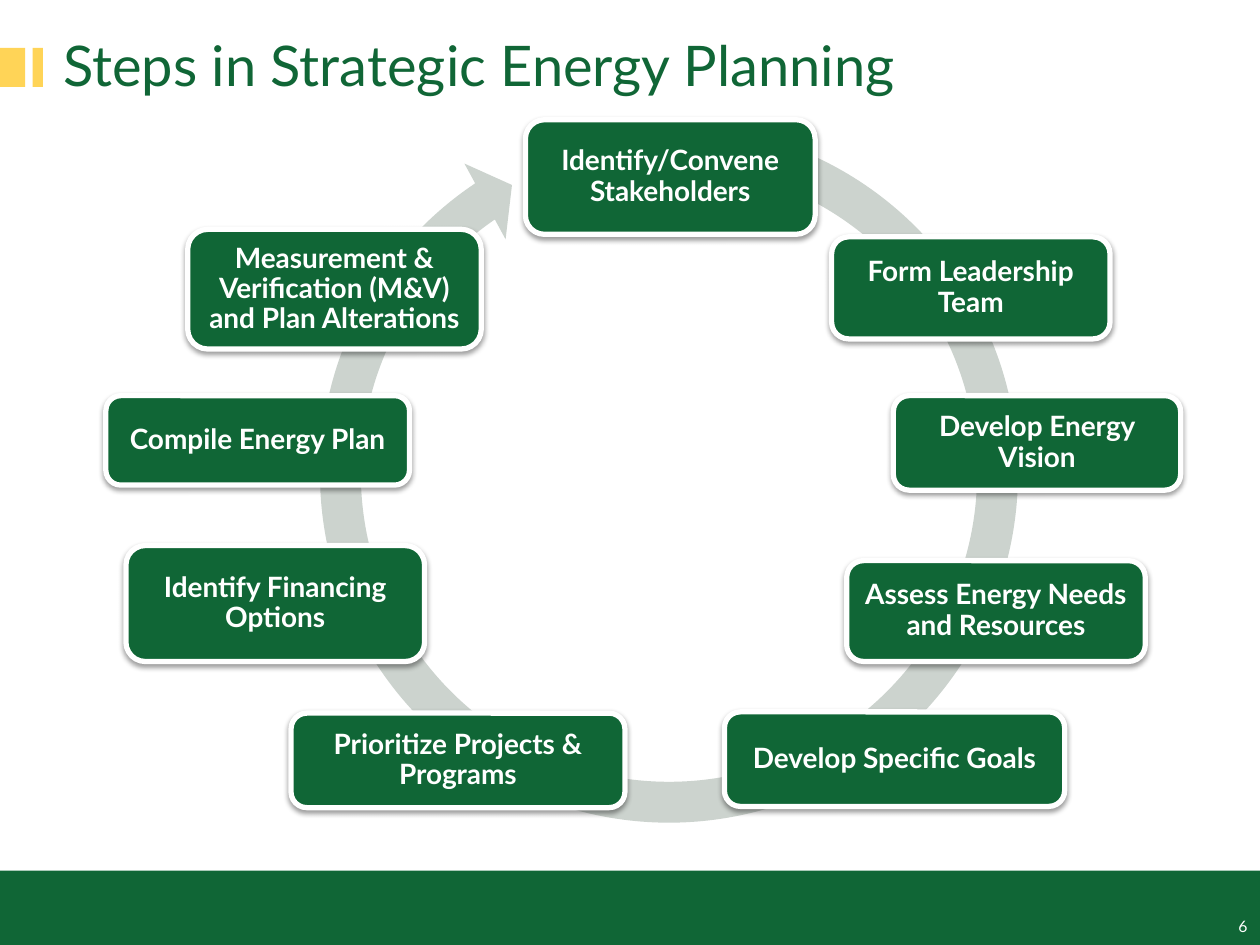
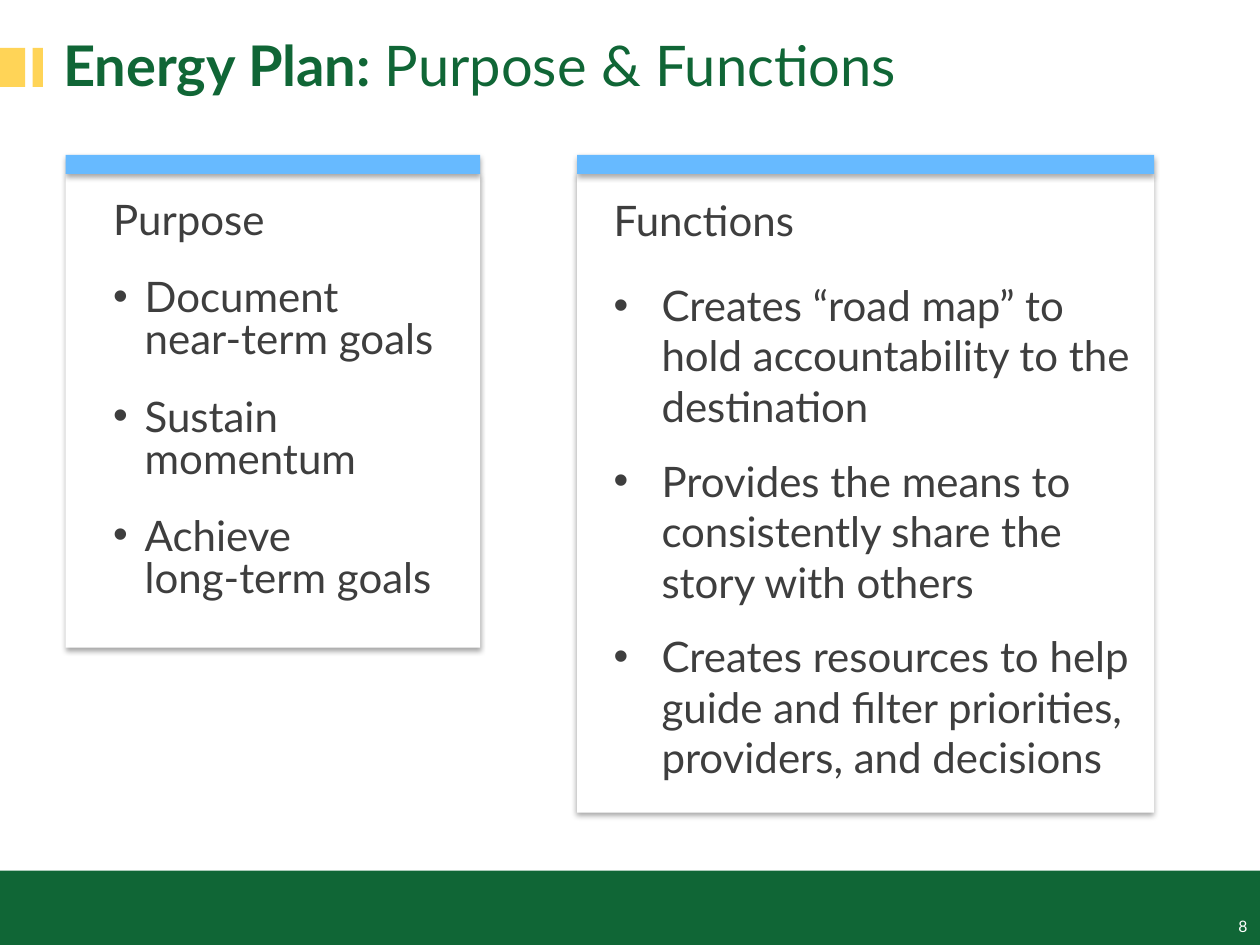
import pptx
import pptx.dml.color
import pptx.enum.shapes
import pptx.enum.text
import pptx.oxml
import pptx.oxml.ns
import pptx.util
from lxml import etree

Inches = pptx.util.Inches
Pt = pptx.util.Pt
Shape = pptx.enum.shapes.MSO_SHAPE
Align = pptx.enum.text.PP_ALIGN
Anchor = pptx.enum.text.MSO_ANCHOR
qn = pptx.oxml.ns.qn

FONT = "Lato"
COLORS = {
    "green": "106636",
    "yellow": "FFD457",
    "blue": "67BAFF",
    "ring": "CCD3CE",
    "text": "3E3E3E",
    "white": "FFFFFF",
}
BAND = (0, 6.91, 10, 0.6)
TITLE_MARKS = [(0, 0.38, 0.2, 0.31), (0.26, 0.38, 0.08, 0.31)]
TITLE = (0.4, 0.19, 9, 1.08)
PAGE_NUMBER = (7.67, 7.23, 2.33, 0.27)
BAR_HEIGHT = 0.15

RING = (2.36, 0.81, 5.9, 5.9)
RING_ADJUSTMENTS = [0.055, 3.307, 141.572, 171.58, 0.058]
STEPS = [
    ("Identify/Convene Stakeholders", (4.17, 0.95, 2.3, 0.91)),
    ("Form Leadership Team", (6.6, 1.88, 2.21, 0.81)),
    ("Develop Energy Vision", (7.09, 3.14, 2.28, 0.75)),
    ("Assess Energy Needs and Resources", (6.72, 4.45, 2.37, 0.8)),
    ("Develop Specific Goals", (5.75, 5.65, 2.7, 0.75)),
    ("Prioritize Projects & Programs", (2.31, 5.66, 2.65, 0.75)),
    ("Identify Financing Options", (1, 4.33, 2.37, 0.92)),
    ("Compile Energy Plan", (0.84, 3.14, 2.41, 0.71)),
    ("Measurement & Verification (M&V) and Plan Alterations", (1.49, 1.82, 2.33, 0.95)),
]
PURPOSE = ["Document\nnear-term goals", "Sustain momentum", "Achieve\nlong-term goals"]
FUNCTIONS = [
    "Creates “road map” to hold accountability to the destination",
    "Provides the means to consistently share the story with others",
    "Creates resources to help guide and filter priorities, providers, and decisions",
]


def color(name):
    """Return the named colour as an RGB value."""
    return pptx.dml.color.RGBColor.from_string(COLORS[name])


def place(shape, box):
    """Move and size a shape to a box given in inches."""
    shape.left, shape.top, shape.width, shape.height = map(Inches, box)


def add_filled_shape(slide, kind, box, fill):
    """Add a flat shape without outline or shadow."""
    shape = slide.shapes.add_shape(kind, *map(Inches, box))
    shape.shadow.inherit = False
    shape.fill.solid()
    shape.fill.fore_color.rgb = color(fill)
    shape.line.fill.background()
    return shape


def add_shadow(shape, distance, opacity):
    """Give a shape a soft shadow that falls straight down."""
    effects = shape.element.spPr.find(qn("a:effectLst"))
    shadow = etree.SubElement(
        effects, qn("a:outerShdw"), blurRad=str(Pt(3.1)), dist=str(Pt(distance)),
        dir="5400000", rotWithShape="0")
    black = etree.SubElement(shadow, qn("a:srgbClr"), val="000000")
    etree.SubElement(black, qn("a:alpha"), val=str(opacity * 1000))


def format_runs(paragraph, size, fill, bold=False):
    """Set the font of every run in a paragraph."""
    for run in paragraph.runs:
        run.font.name = FONT
        run.font.size = Pt(size)
        run.font.bold = bold
        run.font.color.rgb = color(fill)


def set_bullet(paragraph, indent):
    """Give a paragraph a hanging bullet, or none when the indent is zero."""
    properties = paragraph._p.get_or_add_pPr()
    properties.set("marL", str(Inches(indent)))
    properties.set("indent", str(-Inches(indent)))
    if indent:
        etree.SubElement(properties, qn("a:buFont"), typeface="Arial")
        etree.SubElement(properties, qn("a:buChar"), char="•")
    else:
        etree.SubElement(properties, qn("a:buNone"))


def fill_list(shape, heading, items, indent, gaps, line_spacing):
    """Write a heading and its bulleted items."""
    frame = shape.text_frame
    frame.word_wrap = True
    frame.auto_size = pptx.enum.text.MSO_AUTO_SIZE.NONE
    frame.vertical_anchor = Anchor.TOP
    frame.text = heading
    heading_paragraph = frame.paragraphs[0]
    set_bullet(heading_paragraph, 0)
    heading_paragraph.space_before = Pt(0)
    for item, gap in zip(items, gaps):
        paragraph = frame.add_paragraph()
        paragraph.text = item
        set_bullet(paragraph, indent)
        paragraph.space_before = Pt(gap)
        paragraph.line_spacing = line_spacing
    for paragraph in frame.paragraphs:
        format_runs(paragraph, 24, "text")


def add_base_slide(presentation, layout, title_parts, number):
    """Add a slide with its title, marks, bottom band and page number."""
    slide = presentation.slides.add_slide(presentation.slide_layouts[layout])
    add_filled_shape(slide, Shape.RECTANGLE, BAND, "green")
    for mark in TITLE_MARKS:
        add_filled_shape(slide, Shape.RECTANGLE, mark, "yellow")

    title = slide.shapes.title
    place(title, TITLE)
    title.text_frame.vertical_anchor = Anchor.TOP
    paragraph = title.text_frame.paragraphs[0]
    paragraph.alignment = Align.LEFT
    for text, _ in title_parts:
        paragraph.add_run().text = text
    format_runs(paragraph, 32, "green")
    for run, (_, bold) in zip(paragraph.runs, title_parts):
        run.font.bold = bold

    page_number = slide.shapes.add_textbox(*map(Inches, PAGE_NUMBER))
    page_number.text_frame.word_wrap = True
    page_number.text_frame.text = str(number)
    paragraph = page_number.text_frame.paragraphs[0]
    paragraph.alignment = Align.RIGHT
    format_runs(paragraph, 9, "white")
    return slide


def add_step(slide, text, box):
    """Add one rounded step of the cycle."""
    step = add_filled_shape(slide, Shape.ROUNDED_RECTANGLE, box, "green")
    step.line.color.rgb = color("white")
    step.line.width = Pt(3)
    add_shadow(step, 1.6, 38)
    frame = step.text_frame
    frame.word_wrap = True
    frame.vertical_anchor = Anchor.MIDDLE
    frame.margin_left = frame.margin_right = Inches(0.07)
    frame.margin_top = frame.margin_bottom = Inches(0.07)
    frame.text = text
    paragraph = frame.paragraphs[0]
    paragraph.alignment = Align.CENTER
    paragraph.line_spacing = 0.9
    format_runs(paragraph, 16, "white", bold=True)


def add_card(slide, box):
    """Add a white card topped by a blue bar."""
    left, top, width, height = box
    card_box = (left, top + BAR_HEIGHT, width, height - BAR_HEIGHT)
    bar_box = (left, top, width, BAR_HEIGHT)
    for part_box, fill in [(card_box, "white"), (bar_box, "blue")]:
        part = add_filled_shape(slide, Shape.RECTANGLE, part_box, fill)
        add_shadow(part, 1.8, 35)


def build_cycle_slide(presentation):
    """Build the slide with the ring of planning steps."""
    slide = add_base_slide(
        presentation, 5, [("Steps in Strategic Energy Planning", False)], 6)
    ring = add_filled_shape(slide, Shape.CIRCULAR_ARROW, RING, "ring")
    for index, value in enumerate(RING_ADJUSTMENTS):
        ring.adjustments[index] = value
    for text, box in STEPS:
        add_step(slide, text, box)


def build_purpose_slide(presentation):
    """Build the slide with the purpose and functions cards."""
    slide = add_base_slide(
        presentation, 1, [("Energy Plan: ", True), ("Purpose & Functions", False)], 8)
    add_card(slide, (0.52, 1.23, 3.29, 3.91))
    purpose = slide.shapes.add_textbox(*map(Inches, (0.8, 1.49, 3.02, 3.77)))
    fill_list(purpose, "Purpose", PURPOSE, 0.25, [20, 20, 20], Pt(24))

    add_card(slide, (4.58, 1.23, 4.58, 5.22))
    functions = slide.placeholders[1]
    slide.shapes.element.append(functions.element)
    place(functions, (4.77, 1.49, 4.31, 4.4))
    fill_list(functions, "Functions", FUNCTIONS, 0.38, [20, 14, 14], 1.0)


def main():
    """Build and save the presentation."""
    presentation = pptx.Presentation()
    presentation.slide_width = Inches(10)
    presentation.slide_height = Inches(7.5)
    build_cycle_slide(presentation)
    build_purpose_slide(presentation)
    presentation.save("out.pptx")


if __name__ == "__main__":
    main()
